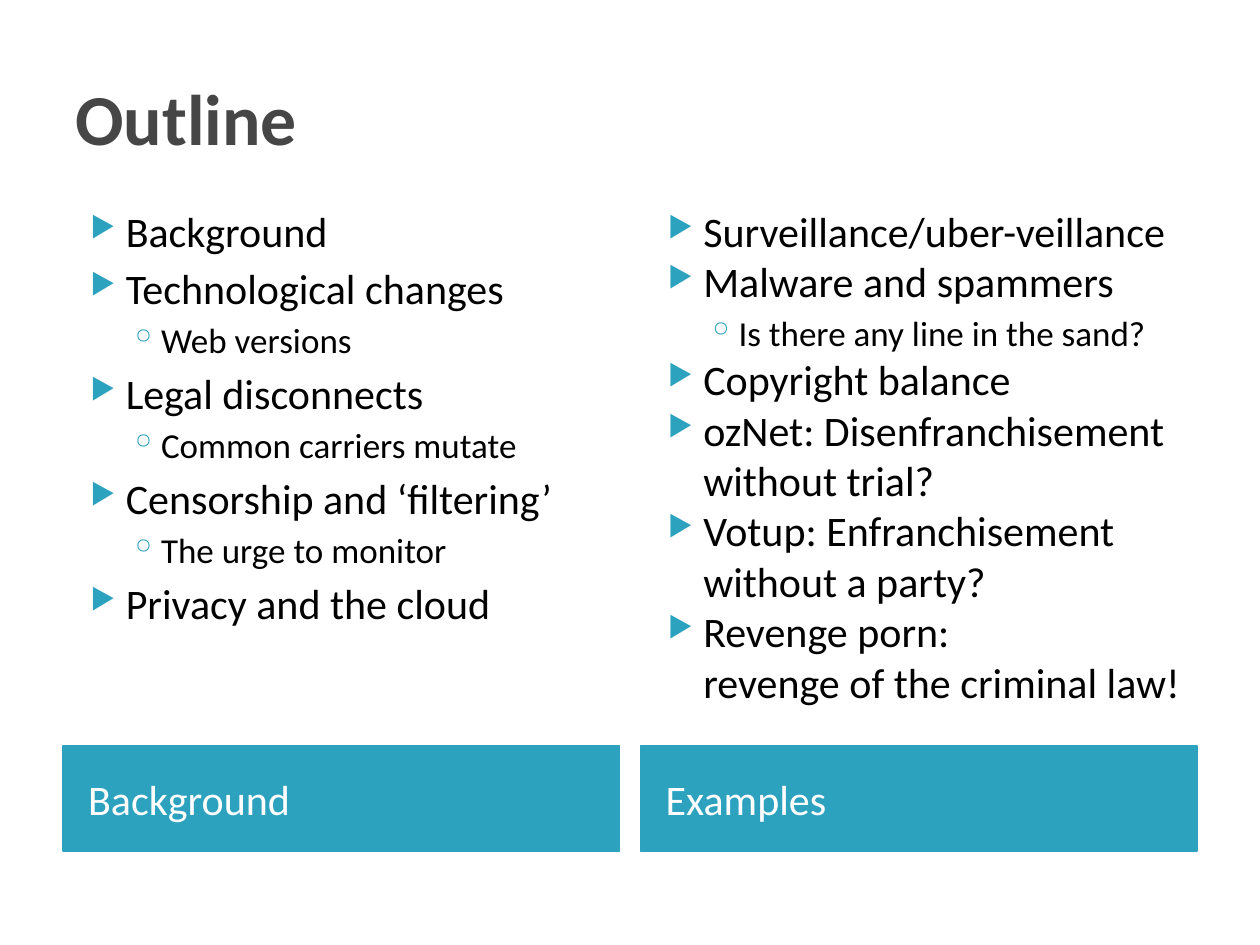
from dataclasses import dataclass

from lxml.etree import SubElement
from pptx import Presentation
from pptx.dml.color import RGBColor
from pptx.enum.shapes import MSO_SHAPE
from pptx.enum.text import MSO_ANCHOR, PP_ALIGN
from pptx.oxml.ns import qn
from pptx.util import Pt


@dataclass(frozen=True)
class Theme:
    font: str = "Calibri"
    accent: str = "2DA2BF"
    heading: str = "464646"
    body: str = "000000"
    white: str = "FFFFFF"
    title_size: float = 41
    text_size: float = 24
    sub_size: float = 20


THEME = Theme()

# Column grid, in points
LEFT, COL_W, GAP = 36, 318, 12
LIST_TOP, LIST_H = 113.76, 310.32
BAND_TOP, BAND_H = 426.24, 60

# Per level: left margin, hanging indent, bullet, bullet percent, size
LEVELS = [
    (28.8, 20.16, "▶", 68, THEME.text_size),
    (48.96, 18, "◦", 100, THEME.sub_size),
]
SUB_SPACE = 3.2

# Caption, space before main items, (level, text) items
COLUMNS = [
    ("Background", 4, [
        (0, "Background"),
        (0, "Technological changes"),
        (1, "Web versions"),
        (0, "Legal disconnects"),
        (1, "Common carriers mutate"),
        (0, "Censorship and ‘filtering’"),
        (1, "The urge to monitor"),
        (0, "Privacy and the cloud"),
    ]),
    ("Examples", 0, [
        (0, "Surveillance/uber-veillance"),
        (0, "Malware and spammers"),
        (1, "Is there any line in the sand?"),
        (0, "Copyright balance"),
        (0, "ozNet: Disenfranchisement without trial?"),
        (0, "Votup: Enfranchisement without a party?"),
        (0, "Revenge porn: \vrevenge of the criminal law!"),
    ]),
]


def style(p, size, color, bold=False):
    for r in p.runs:
        r.font.name = THEME.font
        r.font.size = Pt(size)
        r.font.bold = bold
        r.font.color.rgb = RGBColor.from_string(color)


def add_box(s, x, y, w, h):
    tb = s.shapes.add_textbox(Pt(x), Pt(y), Pt(w), Pt(h))
    tb.text_frame.word_wrap = True
    return tb.text_frame


def add_title(s, text):
    tf = add_box(s, LEFT, 21.6, 648, 90)
    tf.vertical_anchor = MSO_ANCHOR.MIDDLE
    tf.text = text
    style(tf.paragraphs[0], THEME.title_size, THEME.heading, bold=True)


def add_bullet(p, level):
    margin, hang, char, percent, _ = LEVELS[level]
    pPr = p._p.get_or_add_pPr()
    pPr.set("marL", str(Pt(margin)))
    pPr.set("indent", str(-Pt(hang)))
    clr = SubElement(pPr, qn("a:buClr"))
    SubElement(clr, qn("a:srgbClr"), val=THEME.accent)
    SubElement(pPr, qn("a:buSzPct"), val=str(percent * 1000))
    SubElement(pPr, qn("a:buChar"), char=char)


def add_list(s, x, items, space):
    tf = add_box(s, x, LIST_TOP, COL_W, LIST_H)
    for i, (level, text) in enumerate(items):
        p = tf.add_paragraph() if i else tf.paragraphs[0]
        p.text = text
        p.level = level
        add_bullet(p, level)
        if i:
            p.space_before = Pt(SUB_SPACE if level else space)
        style(p, LEVELS[level][-1], THEME.body)


def add_band(s, x, text):
    sp = s.shapes.add_shape(MSO_SHAPE.RECTANGLE, Pt(x), Pt(BAND_TOP),
                            Pt(COL_W), Pt(BAND_H))
    sp.shadow.inherit = False
    sp.fill.solid()
    sp.fill.fore_color.rgb = RGBColor.from_string(THEME.accent)
    sp.line.color.rgb = RGBColor.from_string(THEME.accent)
    sp.line.width = Pt(0.75)
    tf = sp.text_frame
    tf.word_wrap = True
    tf.margin_left = Pt(14.4)
    tf.vertical_anchor = MSO_ANCHOR.MIDDLE
    tf.text = text
    p = tf.paragraphs[0]
    p.alignment = PP_ALIGN.LEFT
    style(p, THEME.text_size, THEME.white)


def main():
    prs = Presentation()
    prs.slide_width, prs.slide_height = Pt(720), Pt(540)
    s = prs.slides.add_slide(prs.slide_layouts[6])

    add_title(s, "Outline")

    # Each column: a bulleted list above its caption band
    for i, (caption, space, items) in enumerate(COLUMNS):
        x = LEFT + i * (COL_W + GAP)
        add_band(s, x, caption)
        add_list(s, x, items, space)

    prs.save("out.pptx")


if __name__ == "__main__":
    main()
